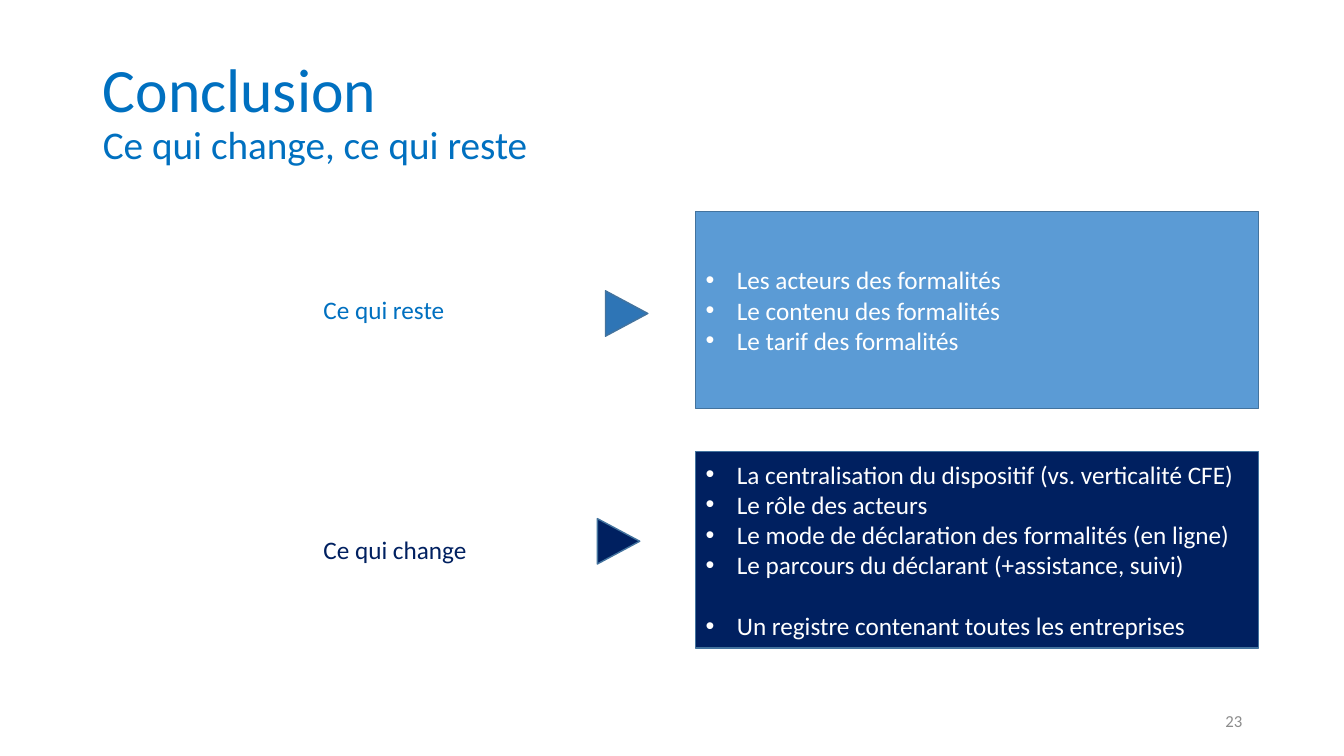
from lxml.etree import SubElement
from pptx import Presentation
from pptx.dml.color import RGBColor
from pptx.enum.shapes import MSO_SHAPE as SHAPE
from pptx.enum.text import MSO_ANCHOR as ANCHOR, MSO_AUTO_SIZE as AUTO, PP_ALIGN as ALIGN
from pptx.oxml.ns import qn
from pptx.util import Inches, Pt

FONT = "Calibri"
BLUE, NAVY, SKY, MID = "0070C0", "002060", "5B9BD5", "2E75B6"
OUTLINE, GREY, WHITE = "43739E", "8C8C8C", "FFFFFF"
LABEL_X, PANEL_X = 3.11, 6.9
PANEL_W, PANEL_H = 5.58, 1.95
ROW_TOP, ROW_STEP = 2.1, 2.38
INDENT = 0.31

# label, label colour, panel colour, arrow colour, arrow place, bullet groups
ROWS = [
    ("Ce qui reste", BLUE, SKY, MID, (5.99, 2.9),
     [["Les acteurs des formalités",
       "Le contenu des formalités",
       "Le tarif des formalités"]]),
    ("Ce qui change", NAVY, NAVY, NAVY, (5.91, 5.16),
     [["La centralisation du dispositif (vs. verticalité CFE)",
       "Le rôle des acteurs",
       "Le mode de déclaration des formalités (en ligne)",
       "Le parcours du déclarant (+assistance, suivi)"],
      ["Un registre contenant toutes les entreprises"]]),
]


def rgb(color):
    return RGBColor.from_string(color)


def add_run(p, text, size=18, color=WHITE):
    r = p.add_run()
    r.text = text
    r.font.name, r.font.size = FONT, Pt(size)
    r.font.color.rgb = rgb(color)


def add_bullet(p):
    pPr = p._p.get_or_add_pPr()
    pPr.set("marL", str(Inches(INDENT)))
    pPr.set("indent", str(-Inches(INDENT)))
    SubElement(pPr, qn("a:buFont"), typeface="Arial")
    SubElement(pPr, qn("a:buChar"), char="•")


def add_block(s, kind, x, y, w, h, fill):
    sp = s.shapes.add_shape(kind, Inches(x), Inches(y), Inches(w), Inches(h))
    sp.shadow.inherit = False
    sp.fill.solid()
    sp.fill.fore_color.rgb = rgb(fill)
    sp.line.color.rgb = rgb(OUTLINE)
    sp.line.width = Pt(1)
    return sp


def add_text(s, text, x, y, w, h, wrap=True, align=ALIGN.LEFT, anchor=ANCHOR.TOP, **font):
    tf = s.shapes.add_textbox(Inches(x), Inches(y), Inches(w), Inches(h)).text_frame
    tf.word_wrap = wrap
    tf.auto_size = AUTO.NONE if wrap else AUTO.SHAPE_TO_FIT_TEXT
    tf.vertical_anchor = anchor
    p = tf.paragraphs[0]
    p.alignment = align
    add_run(p, text, **font)


def add_panel(s, y, fill, groups):
    """Draw a filled panel of bullets, with one line of space between groups."""
    tf = add_block(s, SHAPE.RECTANGLE, PANEL_X, y, PANEL_W, PANEL_H, fill).text_frame
    tf.word_wrap = True
    tf.vertical_anchor = ANCHOR.MIDDLE
    p = None
    for g, group in enumerate(groups):
        for i, text in enumerate(group):
            p = tf.add_paragraph() if p else tf.paragraphs[0]
            p.alignment = ALIGN.LEFT
            if g and i == 0:
                p.space_before = Pt(22)
            add_bullet(p)
            add_run(p, text)


def set_title(s, heading, subtitle):
    sp = s.shapes.title
    sp.left, sp.top, sp.width, sp.height = map(Inches, (0.92, 0.4, 11.5, 1.45))
    tf = sp.text_frame
    tf.auto_size = AUTO.NONE
    tf.vertical_anchor = ANCHOR.MIDDLE
    p = tf.paragraphs[0]
    p.alignment, p.line_spacing = ALIGN.LEFT, 0.9
    add_run(p, heading, size=44, color=BLUE)
    p.add_line_break()
    add_run(p, subtitle, size=28, color=BLUE)


def main():
    prs = Presentation()
    prs.slide_width, prs.slide_height = Inches(13.33), Inches(7.5)
    s = prs.slides.add_slide(prs.slide_layouts[5])
    set_title(s, "Conclusion", "Ce qui change, ce qui reste")
    for i, (label, ink, fill, arrow_fill, arrow_at, groups) in enumerate(ROWS):
        y = ROW_TOP + i * ROW_STEP
        add_text(s, label, LABEL_X, y + 0.77, 1.64, 0.4, wrap=False, color=ink)
        arrow = add_block(s, SHAPE.ISOSCELES_TRIANGLE, *arrow_at, 0.45, 0.42, arrow_fill)
        arrow.rotation = 90
        add_panel(s, y, fill, groups)
    add_text(s, "23", 9.42, 6.95, 3, 0.4, align=ALIGN.RIGHT, anchor=ANCHOR.MIDDLE,
             size=12, color=GREY)
    prs.save("out.pptx")


if __name__ == "__main__":
    main()
